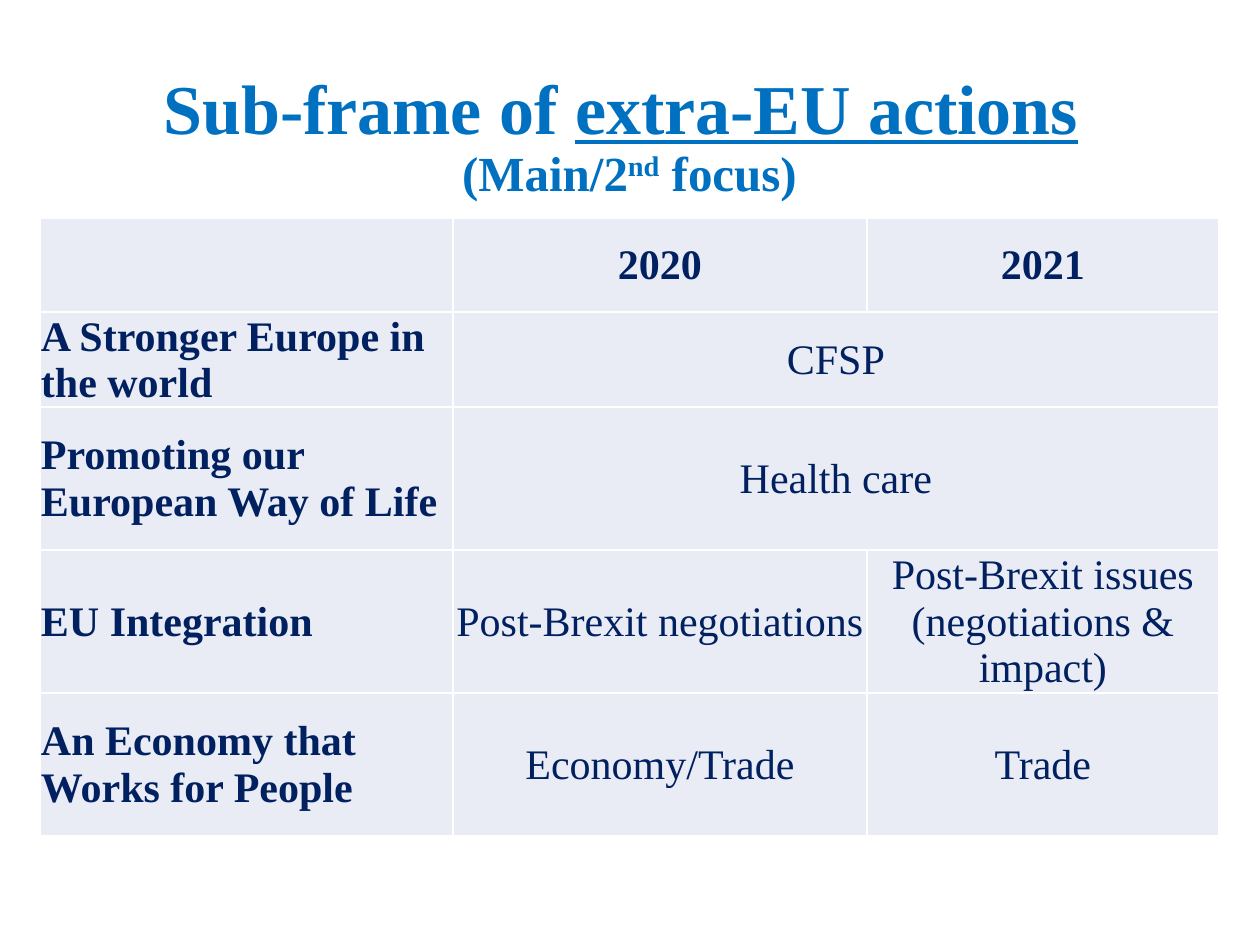
import lxml.etree
import pptx
import pptx.dml.color
import pptx.enum.text
import pptx.oxml
import pptx.oxml.ns
import pptx.util

SCALE = 914400 / 126
FACE = "Times New Roman"
HUES = {"title": "0070C0", "text": "002060", "cell": "E9EBF5", "rule": "FFFFFF"}
ALIGN = pptx.enum.text.PP_ALIGN
ANCHOR = pptx.enum.text.MSO_ANCHOR


def px(num):
    return pptx.util.Emu(round(num * SCALE))


def style(font, size, hue, bold):
    font.name = FACE
    font.size = pptx.util.Pt(size)
    font.bold = bold
    font.color.rgb = pptx.dml.color.RGBColor.from_string(HUES[hue])


deck = pptx.Presentation()
deck.slide_width, deck.slide_height = px(1260), px(945)
slide = deck.slides.add_slide(deck.slide_layouts[5])

# Title
title = slide.shapes.title
title.left, title.top, title.width, title.height = px(40), px(58), px(1179), px(160)
frame = title.text_frame
frame.word_wrap = True
frame.auto_size = pptx.enum.text.MSO_AUTO_SIZE.NONE
frame.vertical_anchor = ANCHOR.MIDDLE
para = frame.paragraphs[0]
para.alignment = ALIGN.CENTER
para.line_spacing = 0.9
parts = [("Sub-frame of ", 40), ("extra-EU actions", 40), (" ", 40),
         ("(Main/2", 28), ("nd", 28), (" focus)", 28)]
for text, size in parts:
    run = para.add_run()
    run.text = text
    style(run.font, size, "title", True)
    if text == "extra-EU actions":
        run.font.underline = True
    elif text == "nd":
        run.font._element.set("baseline", "30000")
    elif text == " ":
        para.add_line_break()
        lxml.etree.SubElement(para._p[-1], pptx.oxml.ns.qn("a:rPr"), sz="4000")

# Table: None joins a cell to the one on its left
rows = [
    ["", "2020", "2021"],
    ["A Stronger Europe in the world", "CFSP", None],
    ["Promoting our European Way of Life", "Health care", None],
    ["EU Integration", "Post-Brexit negotiations",
     "Post-Brexit issues (negotiations & impact)"],
    ["An Economy that Works for People", "Economy/Trade", "Trade"],
]
wide = [413, 414, 352]
high = [94, 95, 143, 143, 143]
grid = slide.shapes.add_table(len(rows), len(wide), px(40), px(218),
                              px(sum(wide)), px(sum(high))).table
grid.first_row = grid.horz_banding = False
for col, size in zip(grid.columns, wide):
    col.width = px(size)
for row, size in zip(grid.rows, high):
    row.height = px(size)

for r, row in enumerate(rows):
    for c, text in enumerate(row):
        cell = grid.cell(r, c)
        for side in ("lnL", "lnR", "lnT", "lnB"):
            cell._tc.get_or_add_tcPr().append(pptx.oxml.parse_xml(
                f'<a:{side} {pptx.oxml.ns.nsdecls("a")} w="12700"><a:solidFill>'
                f'<a:srgbClr val="{HUES["rule"]}"/></a:solidFill></a:{side}>'))
        cell.fill.solid()
        cell.fill.fore_color.rgb = pptx.dml.color.RGBColor.from_string(HUES["cell"])
        if text is None:
            grid.cell(r, c - 1).merge(cell)
            continue
        cell.margin_left = cell.margin_right = cell.margin_top = px(1)
        cell.margin_bottom = 0
        cell.vertical_anchor = ANCHOR.BOTTOM if (r, c) == (1, 0) else ANCHOR.MIDDLE
        cell.text = text
        para = cell.text_frame.paragraphs[0]
        para.alignment = ALIGN.CENTER if c else ALIGN.LEFT
        for run in para.runs:
            style(run.font, 24, "text", r == 0 or c == 0)

deck.save("out.pptx")
